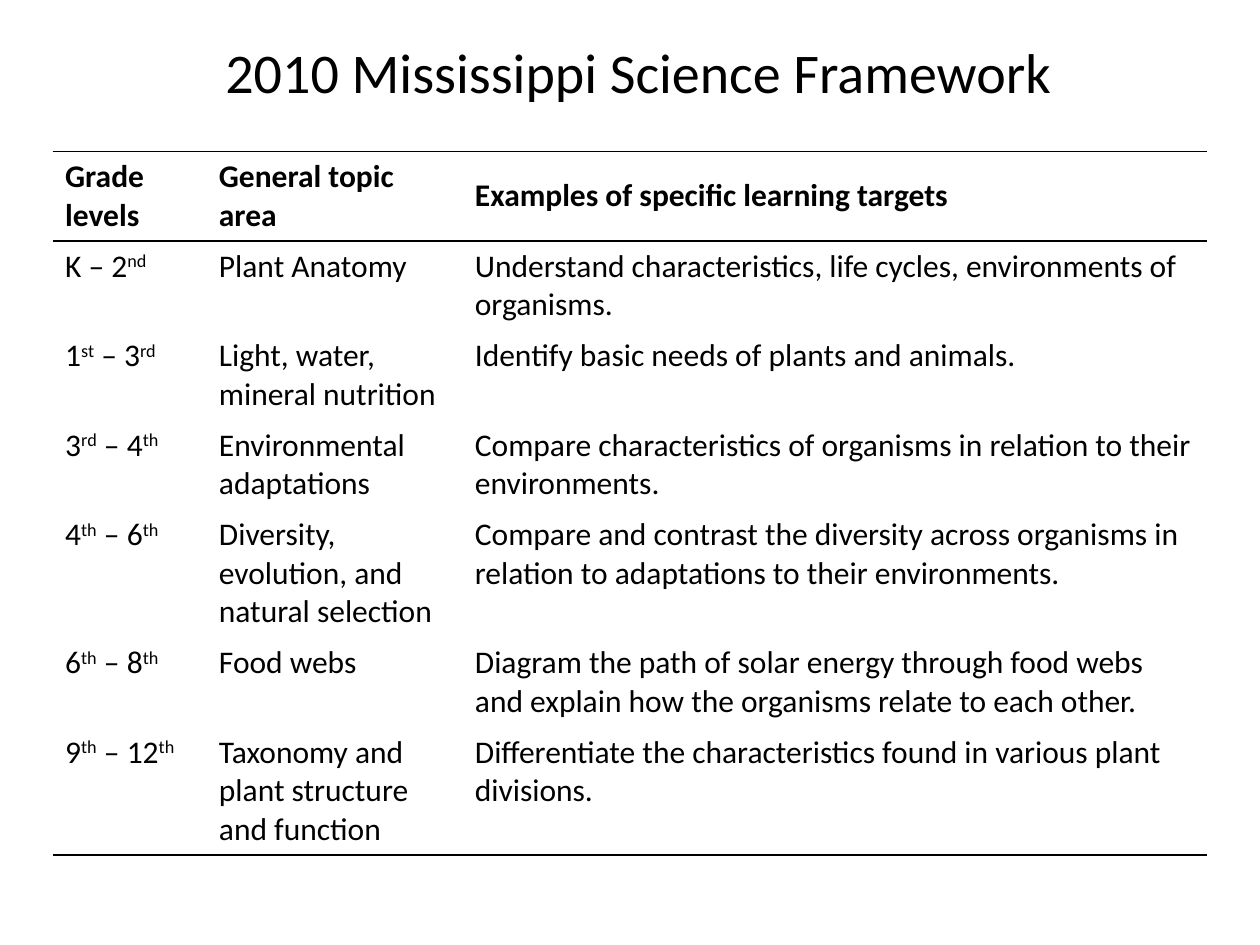
import pptx
import pptx.dml.color
import pptx.enum.text
import pptx.oxml.ns
import pptx.util
from lxml import etree

Cm, Pt = pptx.util.Cm, pptx.util.Pt
BLACK = pptx.dml.color.RGBColor(0, 0, 0)
FONT = "Calibri"
TITLE = "2010 Mississippi Science Framework "
HEADER = ("Grade levels", "General topic area", "Examples of specific learning targets")
# Grade bounds as (number, ordinal ending), topic, target, lines in the tallest cell
ROWS = [
    ([("K", ""), ("2", "nd")], "Plant Anatomy",
     "Understand characteristics, life cycles, environments of organisms.", 2),
    ([("1", "st"), ("3", "rd")], "Light, water, mineral nutrition",
     "Identify basic needs of plants and animals.", 2),
    ([("3", "rd"), ("4", "th")], "Environmental adaptations",
     "Compare characteristics of organisms in relation to their environments.", 2),
    ([("4", "th"), ("6", "th")], "Diversity, evolution, and natural selection",
     "Compare and contrast the diversity across organisms in relation to "
     "adaptations to their environments.", 3),
    ([("6", "th"), ("8", "th")], "Food webs",
     "Diagram the path of solar energy through food webs and explain how "
     "the organisms relate to each other.", 2),
    ([("9", "th"), ("12", "th")], "Taxonomy and plant structure and function",
     "Differentiate the characteristics found in various plant divisions.", 3),
]
COL_WIDTHS = (3.1, 5.16, 15.02)
LINE_HEIGHT, CELL_PADDING = 0.77, 0.25
HEADER_LINES = 2


def add_run(p, text, size, bold=False, superscript=False):
    r = p.add_run()
    r.text = text
    for name, value in {"name": FONT, "size": Pt(size), "bold": bold}.items():
        setattr(r.font, name, value)
    r.font.color.rgb = BLACK
    if superscript:
        r._r.get_or_add_rPr().set("baseline", "30000")


def set_borders(cell, ruled):
    """Rule the sides named in ruled ("T", "B") and clear the others."""
    qn = pptx.oxml.ns.qn
    tcPr = cell._tc.get_or_add_tcPr()
    for side in "LRTB":
        ln = etree.SubElement(tcPr, qn(f"a:ln{side}"), w=str(Pt(1)))
        if side in ruled:
            fill = etree.SubElement(ln, qn("a:solidFill"))
            etree.SubElement(fill, qn("a:srgbClr"), val=str(BLACK))
        else:
            etree.SubElement(ln, qn("a:noFill"))


def add_grades(p, bounds):
    for i, (number, ending) in enumerate(bounds):
        add_run(p, f" – {number}" if i else number, 18)
        if ending:
            add_run(p, ending, 18, superscript=True)


def add_framework_table(slide):
    heights = [n * LINE_HEIGHT + CELL_PADDING
               for n in [HEADER_LINES] + [row[-1] for row in ROWS]]
    table = slide.shapes.add_table(
        len(heights), len(COL_WIDTHS), Cm(1.06), Cm(3.05),
        Cm(sum(COL_WIDTHS)), Cm(sum(heights))).table
    table.first_row = table.horz_banding = False
    for column, width in zip(table.columns, COL_WIDTHS):
        column.width = Cm(width)
    for row, height in zip(table.rows, heights):
        row.height = Cm(height)

    borders = {0: "TB", 1: "T", len(ROWS): "B"}
    for i, content in enumerate([HEADER] + [row[:3] for row in ROWS]):
        for j, value in enumerate(content):
            cell = table.cell(i, j)
            set_borders(cell, borders.get(i, ""))
            cell.fill.background()
            p = cell.text_frame.paragraphs[0]
            if i == 0:
                cell.vertical_anchor = pptx.enum.text.MSO_ANCHOR.MIDDLE
            if isinstance(value, list):
                add_grades(p, value)
            else:
                add_run(p, value, 18, bold=i == 0)


def add_title(slide):
    tf = slide.shapes.add_textbox(Cm(3.38), Cm(0.64), Cm(19.25), Cm(1.63)).text_frame
    tf.word_wrap = True
    p = tf.paragraphs[0]
    p.alignment = pptx.enum.text.PP_ALIGN.CENTER
    add_run(p, TITLE, 32)


def main():
    prs = pptx.Presentation()
    prs.slide_width, prs.slide_height = Cm(25.4), Cm(19.05)
    slide = prs.slides.add_slide(prs.slide_layouts[6])
    add_framework_table(slide)
    add_title(slide)
    prs.save("out.pptx")


if __name__ == "__main__":
    main()
